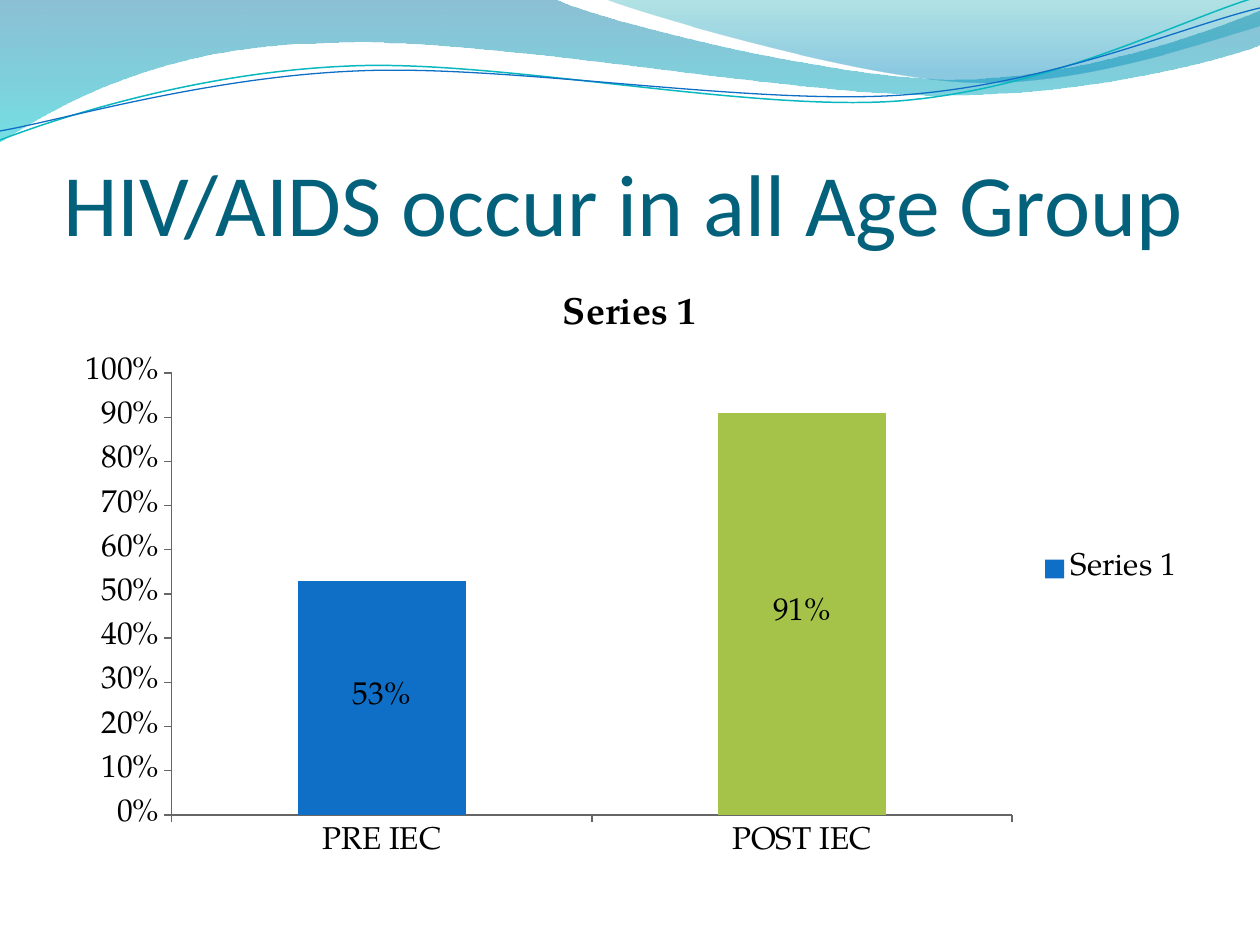
from lxml.etree import SubElement
from pptx import Presentation
from pptx.chart.data import CategoryChartData
from pptx.dml.color import RGBColor
from pptx.enum.chart import XL_CHART_TYPE, XL_LABEL_POSITION, XL_LEGEND_POSITION, XL_TICK_MARK
from pptx.enum.text import MSO_ANCHOR, MSO_AUTO_SIZE, PP_ALIGN
from pptx.oxml.ns import qn
from pptx.util import Pt

PX = 914400 / 126
BLUE = RGBColor(0x0F, 0x6F, 0xC6)
GREEN = RGBColor(0xA5, 0xC2, 0x49)
TEAL = RGBColor(0x0A, 0xB8, 0xBF)
TITLE = RGBColor(0x04, 0x61, 0x7B)
BLACK = RGBColor(0, 0, 0)
AXIS = RGBColor(0x66, 0x66, 0x66)
CHART_FONT = "TeX Gyre Pagella"

# Each outline is a start point, then steps: one point is a line, three are a Bezier curve
LEFT_WAVE = ((0, 0), [
    [(554, -1)],
    [(600, 21), (837, 79), (955, 79)],
    [(1074, 79), (1207, 33), (1260, 11)],
    [(1261, 45)],
    [(1237, 55), (1096, 96), (940, 95)],
    [(783, 95), (481, 35), (324, 43)],
    [(163, 45), (58, 105), (-1, 142)],
])
RIGHT_WAVE = ((604, -1), [
    [(641, 14), (859, 78), (969, 82)],
    [(1079, 87), (1211, 40), (1260, 26)],
    [(1260, 0)],
])
TEAL_LINE = ((0, 140), [
    [(60, 117), (199, 72), (349, 66)],
    [(498, 59), (747, 112), (898, 101)],
    [(1050, 89), (1182, 19), (1257, -3)],
])
BLUE_LINE = ((0, 131), [
    [(59, 121), (207, 77), (357, 71)],
    [(508, 64), (752, 106), (903, 95)],
    [(1053, 84), (1184, 26), (1260, 8)],
])
# Gradient stops: position, colour, opacity in percent
LEFT_STOPS = [(0, RGBColor(0, 0x74, 0xA1), 45), (1, RGBColor(0, 0xC6, 0xCF), 55)]
RIGHT_STOPS = [(0, RGBColor(0, 0xA1, 0xA9), 30), (0.8, RGBColor(0, 0x8B, 0xBF), 45)]


def px(n):
    return round(n * PX)


def add_outline(s, outline, left, top, close):
    start, steps = outline
    builder = s.shapes.build_freeform(*start, scale=PX)
    builder.add_line_segments([point for step in steps for point in step], close=close)
    sp = builder.convert_to_shape(px(left), px(top))
    sp.shadow.inherit = False
    # Join the three points of each curve into one Bezier segment
    segments = iter(list(sp._element.iter(qn("a:lnTo"))))
    for step in steps:
        first, *others = [next(segments) for _ in step]
        if others:
            first.tag = qn("a:cubicBezTo")
        for other in others:
            first.append(other[0])
            other.getparent().remove(other)
    return sp


def add_waves(s, left, top):
    for outline, stops in ((LEFT_WAVE, LEFT_STOPS), (RIGHT_WAVE, RIGHT_STOPS)):
        sp = add_outline(s, outline, left, top, True)
        sp.line.fill.background()
        sp.fill.gradient()
        sp.fill.gradient_angle = 270
        for stop, (position, color, _) in zip(sp.fill.gradient_stops, stops):
            stop.position = position
            stop.color.rgb = color
        for clr, (_, _, opacity) in zip(sp._element.spPr.iter(qn("a:srgbClr")), stops):
            SubElement(clr, qn("a:alpha")).set("val", str(opacity * 1000))
    for outline, color, width in ((TEAL_LINE, TEAL, 0.85), (BLUE_LINE, BLUE, 0.75)):
        sp = add_outline(s, outline, left, top, False)
        sp.fill.background()
        sp.line.color.rgb = color
        sp.line.width = Pt(width)


def add_title(s, left, top, width, height):
    sp = s.shapes.title
    sp.left, sp.top, sp.width, sp.height = map(px, (left, top, width, height))
    tf = sp.text_frame
    tf.auto_size = MSO_AUTO_SIZE.NONE
    tf.vertical_anchor = MSO_ANCHOR.BOTTOM
    tf.margin_left = tf.margin_right = tf.margin_bottom = 0
    tf.margin_top = px(6)
    p = tf.paragraphs[0]
    p.alignment = PP_ALIGN.LEFT
    r = p.add_run()
    r.text = "HIV/AIDS occur in all Age Group"
    r.font.size = Pt(50)
    r.font.name = "Calibri"
    r.font.color.rgb = TITLE
    s.shapes._spTree.append(sp._element)  # in front of the waves


def set_font(font, size=18, bold=False):
    font.name = CHART_FONT
    font.size = Pt(size)
    font.bold = bold
    font.color.rgb = BLACK


def add_bar_chart(s, left, top, width, height):
    data = CategoryChartData(number_format="0%")
    data.categories = ["PRE IEC", "POST IEC"]
    data.add_series("Series 1", [0.53, 0.91])
    chart = s.shapes.add_chart(XL_CHART_TYPE.COLUMN_STACKED,
                               *map(px, (left, top, width, height)), data).chart
    set_font(chart.font)

    # Title and legend
    chart.has_title = True
    r = chart.chart_title.text_frame.paragraphs[0].add_run()
    r.text = "Series 1"
    set_font(r.font, 21.6, True)
    chart.has_legend = True
    chart.legend.position = XL_LEGEND_POSITION.RIGHT
    chart.legend.include_in_layout = False

    # Axes
    for axis in (chart.category_axis, chart.value_axis):
        axis.has_major_gridlines = False
        axis.major_tick_mark = XL_TICK_MARK.OUTSIDE
        axis.format.line.color.rgb = AXIS
    axis = chart.value_axis
    axis.minimum_scale, axis.maximum_scale, axis.major_unit = 0, 1, 0.1
    axis.tick_labels.number_format = "0%"
    axis.tick_labels.number_format_is_linked = False

    # Bars and their labels
    plot = chart.plots[0]
    plot.vary_by_categories = False
    plot.gap_width = 150
    plot.overlap = 100
    series = plot.series[0]
    for part, color in ((series, BLUE), (series.points[1], GREEN)):
        part.format.fill.solid()
        part.format.fill.fore_color.rgb = color
    labels = series.data_labels
    labels.show_value = True
    labels.number_format = "0%"
    labels.number_format_is_linked = False
    labels.position = XL_LABEL_POSITION.CENTER
    set_font(labels.font)


def main():
    prs = Presentation()
    prs.slide_width, prs.slide_height = px(1260), px(945)
    s = prs.slides.add_slide(prs.slide_layouts[5])
    add_waves(s, 0, 0)
    add_title(s, 63, 97, 1134, 157)
    add_bar_chart(s, 63, 267, 1134, 604)
    prs.save("out.pptx")


if __name__ == "__main__":
    main()
